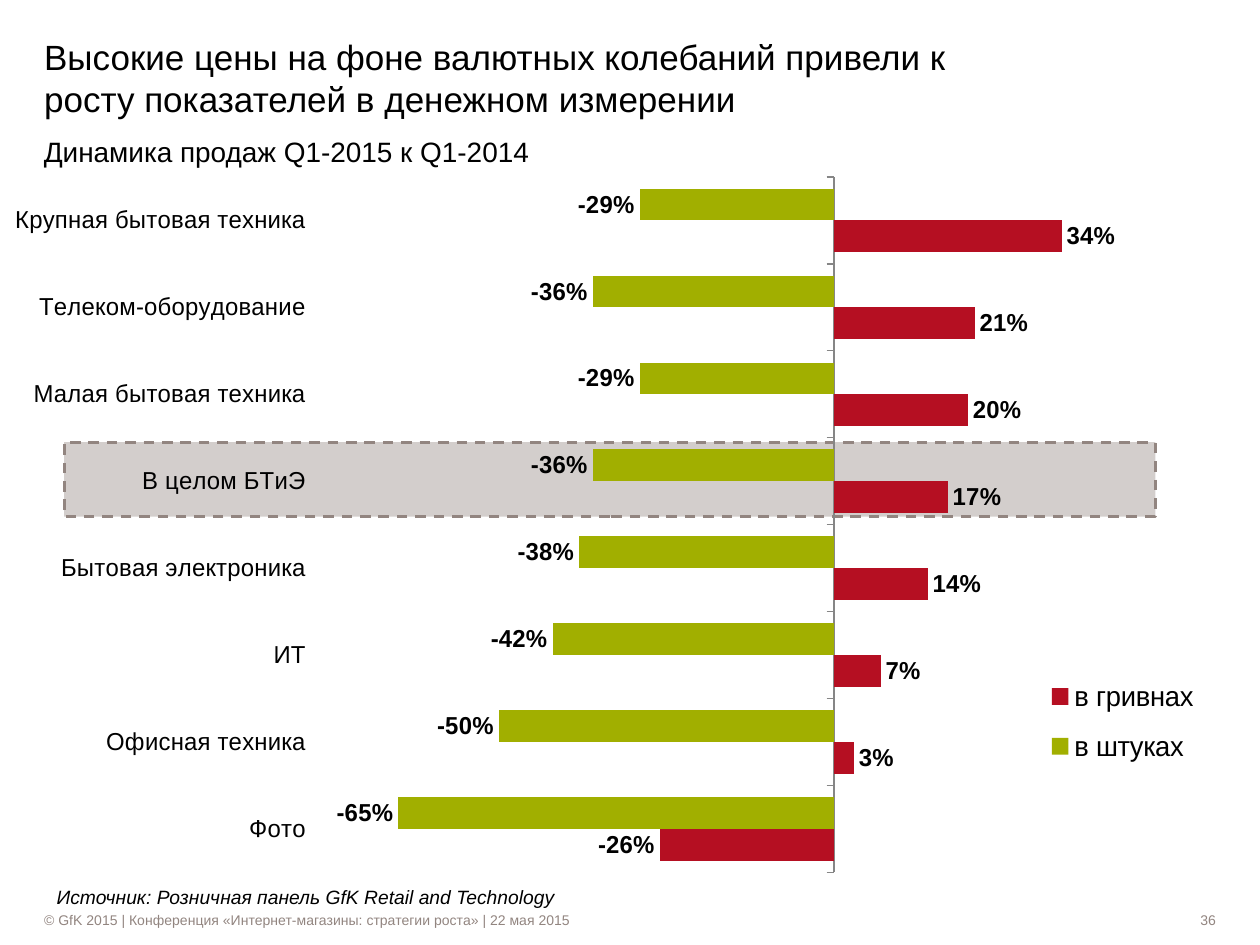
import pptx
import pptx.util
import pptx.chart.data
from lxml import etree
from pptx.dml.color import RGBColor
from pptx.enum.chart import (XL_CHART_TYPE, XL_LABEL_POSITION, XL_LEGEND_POSITION,
                             XL_TICK_LABEL_POSITION, XL_TICK_MARK)
from pptx.enum.dml import MSO_LINE
from pptx.enum.shapes import MSO_SHAPE
from pptx.enum.text import MSO_ANCHOR, PP_ALIGN
from pptx.oxml import parse_xml
from pptx.oxml.ns import nsdecls

BLACK = RGBColor(0x00, 0x00, 0x00)
WHITE = RGBColor(0xFF, 0xFF, 0xFF)
GREY = RGBColor(0x92, 0x85, 0x80)
BAND = RGBColor(0xD3, 0xCE, 0xCC)
AXIS = RGBColor(0x86, 0x86, 0x86)
GREEN = RGBColor(0xA1, 0xAF, 0x00)
RED = RGBColor(0xB5, 0x0F, 0x22)
FONT = "Arial"
COLS, ROWS = 100, 75

CATS = ["Крупная бытовая техника", "Телеком-оборудование", "Малая бытовая техника",
        "В целом БТиЭ", "Бытовая электроника", "ИТ", "Офисная техника", "Фото"]
SERIES = [
    ("в штуках", GREEN, [-0.29, -0.36, -0.29, -0.36, -0.38, -0.42, -0.5, -0.65]),
    ("в гривнах", RED, [0.34, 0.21, 0.2, 0.17, 0.14, 0.07, 0.03, -0.26]),
]


def cells(deck, left, top, wide, high):
    """Turn grid columns and rows into slide lengths."""
    col, row = deck.slide_width / COLS, deck.slide_height / ROWS
    return [round(n) for n in (left * col, top * row, wide * col, high * row)]


def style(font, size, color=BLACK, bold=False, italic=False):
    font.name, font.size = FONT, pptx.util.Pt(size)
    font.bold, font.italic = bold, italic
    font.color.rgb = color


def write(shape, text, size, color=BLACK, italic=False, align=PP_ALIGN.LEFT,
          anchor=MSO_ANCHOR.MIDDLE, inset=(0, 0)):
    frame = shape.text_frame
    frame.text = text
    frame.word_wrap = True
    frame.vertical_anchor = anchor
    frame.margin_left = frame.margin_right = pptx.util.Inches(inset[0])
    frame.margin_top = frame.margin_bottom = pptx.util.Inches(inset[1])
    line = frame.paragraphs[0]
    line.alignment = align
    style(line.runs[0].font, size, color, italic=italic)


def add_rect(slide, box, color):
    rect = slide.shapes.add_shape(MSO_SHAPE.RECTANGLE, *box)
    rect.shadow.inherit = False
    rect.fill.solid()
    rect.fill.fore_color.rgb = color
    rect.line.fill.background()
    return rect


def add_head(slide, box, lead):
    title = slide.shapes.title
    title.left, title.top, title.width, title.height = box
    write(title, "Высокие цены на фоне валютных колебаний привели к росту "
          "показателей в денежном измерении", 20, anchor=MSO_ANCHOR.BOTTOM)
    write(slide.shapes.add_textbox(*lead), "Динамика продаж Q1-2015 к Q1-2014", 16,
          anchor=MSO_ANCHOR.TOP, inset=(0.1, 0.05))


def add_band(slide, box):
    band = add_rect(slide, box, BAND)
    band.line.color.rgb = GREY
    band.line.width = pptx.util.Pt(1.5)
    band.line.dash_style = MSO_LINE.DASH


def set_layout(parent, left, top, wide, high, inner=False):
    """Place a chart part by shares of the chart's size."""
    for old in parent.findall("{*}layout"):
        parent.remove(old)
    target = '<c:layoutTarget val="inner"/>' if inner else ""
    layout = parse_xml(
        f'<c:layout {nsdecls("c")}><c:manualLayout>{target}'
        '<c:xMode val="edge"/><c:yMode val="edge"/>'
        f'<c:x val="{left}"/><c:y val="{top}"/><c:w val="{wide}"/><c:h val="{high}"/>'
        '</c:manualLayout></c:layout>')
    if inner:
        parent.insert(0, layout)
    else:
        parent.find("{*}legendPos").addnext(layout)


def set_axes(chart):
    cat = chart.category_axis
    cat.reverse_order = True
    cat.tick_label_position = XL_TICK_LABEL_POSITION.LOW
    cat.major_tick_mark = XL_TICK_MARK.OUTSIDE
    cat.has_major_gridlines = False
    cat.format.line.color.rgb = AXIS
    cat.format.line.width = pptx.util.Pt(0.75)
    style(cat.tick_labels.font, 14)
    val = chart.value_axis
    val.minimum_scale, val.maximum_scale = -0.77, 0.6
    val.has_major_gridlines = False
    val.visible = False


def set_bars(chart):
    plot = chart.plots[0]
    plot.gap_width, plot.overlap = 74, 0
    plot.vary_by_categories = False
    for bars, (_, color, _) in zip(plot.series, SERIES):
        bars.invert_if_negative = False
        bars.format.fill.solid()
        bars.format.fill.fore_color.rgb = color
        tags = bars.data_labels
        tags.show_value = True
        tags.number_format, tags.number_format_is_linked = "0%", False
        tags.position = XL_LABEL_POSITION.OUTSIDE_END
        style(tags.font, 14, bold=True)


def add_bars(slide, box):
    data = pptx.chart.data.CategoryChartData(number_format="0%")
    data.categories = CATS
    for name, _, values in SERIES:
        data.add_series(name, values)
    chart = slide.shapes.add_chart(XL_CHART_TYPE.BAR_CLUSTERED, *box, data).chart
    chart.has_title = False
    style(chart.font, 12)
    set_axes(chart)
    set_bars(chart)
    chart.has_legend = True
    legend = chart.legend
    legend.position = XL_LEGEND_POSITION.RIGHT
    legend.include_in_layout = False
    style(legend.font, 16)

    root = chart.element
    body = root.find("{*}chart")
    set_layout(body.find("{*}plotArea"), 0.23, 0, 0.77, 0.99, inner=True)
    set_layout(body.find("{*}legend"), 0.83, 0.69, 0.15, 0.17)
    clear = parse_xml(f'<c:spPr {nsdecls("c", "a")}><a:noFill/></c:spPr>')
    etree.SubElement(etree.SubElement(clear, pptx.oxml.ns.qn("a:ln")),
                     pptx.oxml.ns.qn("a:noFill"))
    body.addnext(clear)


def add_source(slide, box):
    write(slide.shapes.add_textbox(*box),
          "Источник: Розничная панель GfK Retail and Technology", 11,
          italic=True, inset=(0.1, 0))


def add_foot(slide, master, note, page):
    """Make the footer parts and hand them to the slide master."""
    tree = master.element.find("{*}cSld/{*}spTree")
    text = "© GfK 2015 | Конференция «Интернет-магазины: стратегии роста» | 22 мая 2015"
    for box, words, align in ((note, text, PP_ALIGN.LEFT), (page, "36", PP_ALIGN.RIGHT)):
        part = add_rect(slide, box, WHITE)
        write(part, words, 8, GREY, align=align)
        tree.append(part.element)


def main():
    deck = pptx.Presentation()
    deck.slide_width = pptx.util.Inches(10)
    deck.slide_height = pptx.util.Inches(7.5)
    slide = deck.slides.add_slide(deck.slide_layouts[5])
    add_foot(slide, deck.slide_master, cells(deck, 3.5, 72.2, 77.2, 1.6),
             cells(deck, 82.3, 72.2, 14.2, 1.6))
    add_band(slide, cells(deck, 5.1, 35.1, 86.6, 5.9))
    add_head(slide, cells(deck, 3.5, 1.3, 78.7, 8.2), cells(deck, 2.5, 10.2, 86.6, 3.7))
    add_bars(slide, cells(deck, 1.2, 14, 96.9, 55.8))
    add_source(slide, cells(deck, 3.5, 70.4, 92.9, 1.6))
    deck.save("out.pptx")


if __name__ == "__main__":
    main()
